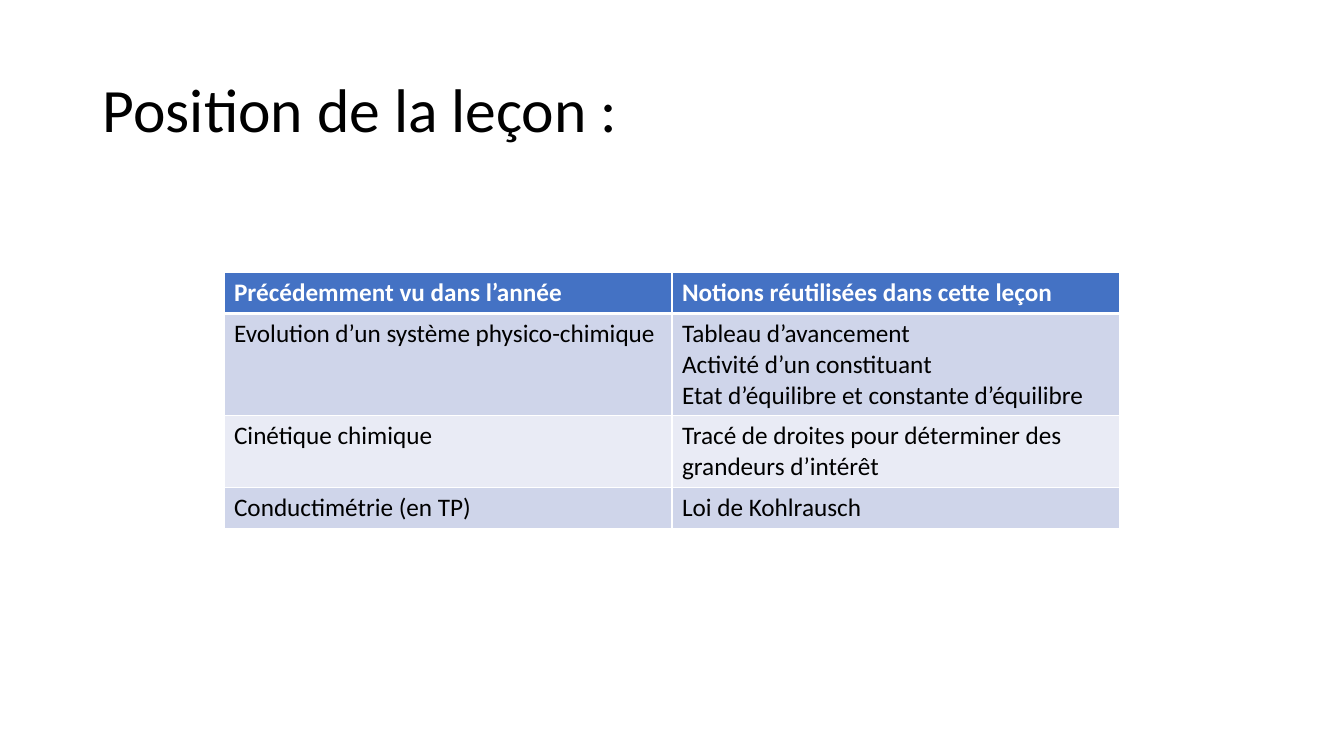
from lxml.etree import SubElement
from pptx import Presentation
from pptx.dml.color import RGBColor
from pptx.enum.text import MSO_ANCHOR as ANCHOR, MSO_AUTO_SIZE as AUTO, PP_ALIGN as ALIGN
from pptx.oxml.ns import qn
from pptx.util import Inches, Pt

TITLE = "Position de la leçon :"
HEADINGS = ["Précédemment vu dans l’année", "Notions réutilisées dans cette leçon"]
LESSONS = [
    ["Evolution d’un système physico-chimique",
     "Tableau d’avancement\nActivité d’un constituant\nEtat d’équilibre et constante d’équilibre"],
    ["Cinétique chimique", "Tracé de droites pour déterminer des grandeurs d’intérêt"],
    ["Conductimétrie (en TP)", "Loi de Kohlrausch"],
]
LINE_COUNTS = [1, 3, 2, 1]


def color(value):
    return RGBColor.from_string(value)


def write(tf, text, size=18, ink="000000", bold=False, spacing=None):
    """Fill a text frame, one paragraph per line of text."""
    for i, line in enumerate(text.split("\n")):
        p = tf.add_paragraph() if i else tf.paragraphs[0]
        p.alignment = ALIGN.LEFT
        if spacing:
            p.line_spacing = spacing
        r = p.add_run()
        r.text = line
        r.font.name, r.font.size, r.font.bold = "Calibri", Pt(size), bold
        r.font.color.rgb = color(ink)


def set_borders(cell, ink, **widths):
    """Draw the sides L, R, T and B, given in that order, in points."""
    for side, width in widths.items():
        ln = SubElement(cell._tc.get_or_add_tcPr(), qn(f"a:ln{side}"), w=str(Pt(width)))
        fill = SubElement(ln, qn("a:solidFill"))
        SubElement(fill, qn("a:srgbClr"), val=ink)


class LessonSlide:
    HEADER, BANDS, RULE = "4472C4", ("CFD5EA", "E9EBF5"), "FFFFFF"
    ROW, LINE = Inches(0.41), Inches(0.3)

    def __init__(self, prs):
        self.width, self.height = prs.slide_width, prs.slide_height
        self.slide = prs.slides.add_slide(prs.slide_layouts[5])

    def box(self, x, y, w, h):
        """Turn shares of the slide's size into lengths."""
        return (int(x * self.width), int(y * self.height),
                int(w * self.width), int(h * self.height))

    def title(self, text, *shares):
        sp = self.slide.shapes.title
        sp.left, sp.top, sp.width, sp.height = self.box(*shares)
        tf = sp.text_frame
        tf.word_wrap, tf.auto_size = True, AUTO.NONE
        tf.vertical_anchor = ANCHOR.MIDDLE
        write(tf, text, size=44, spacing=0.9)

    def table(self, rows, line_counts, x, y, w):
        heights = [self.ROW + (n - 1) * self.LINE for n in line_counts]
        left, top, width, _ = self.box(x, y, w, 0)
        table = self.slide.shapes.add_table(
            len(rows), len(rows[0]), left, top, width, sum(heights)).table
        for i, texts in enumerate(rows):
            table.rows[i].height = heights[i]
            header = i == 0
            for j, text in enumerate(texts):
                cell = table.cell(i, j)
                set_borders(cell, self.RULE, L=1, R=1,
                            T=3 if i == 1 else 1, B=3 if header else 1)
                cell.fill.solid()
                cell.fill.fore_color.rgb = color(
                    self.HEADER if header else self.BANDS[(i - 1) % 2])
                write(cell.text_frame, text, bold=header,
                      ink="FFFFFF" if header else "000000")


def main():
    prs = Presentation()
    prs.slide_width, prs.slide_height = Inches(13.33), Inches(7.5)
    lesson = LessonSlide(prs)
    lesson.title(TITLE, 0.069, 0.053, 0.863, 0.193)
    lesson.table([HEADINGS] + LESSONS, LINE_COUNTS, 1 / 6, 0.36, 2 / 3)
    prs.save("out.pptx")


if __name__ == "__main__":
    main()
